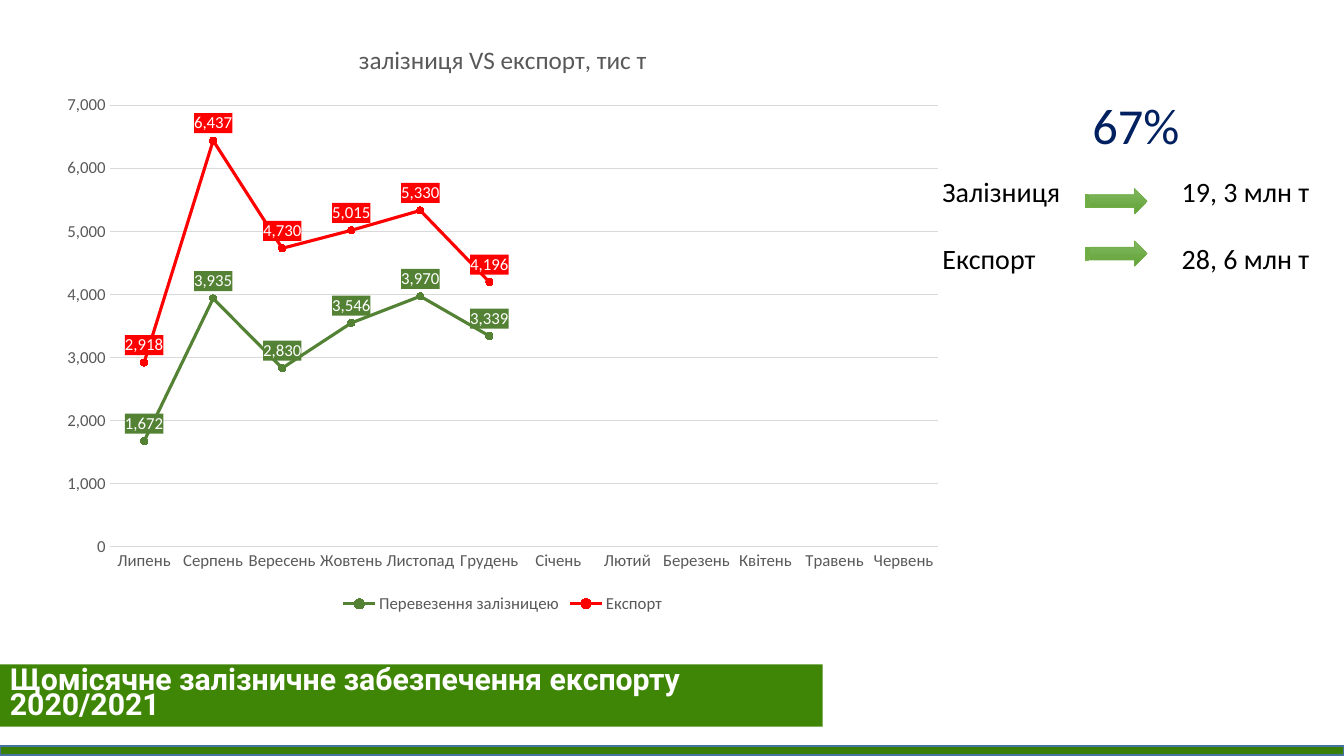
from dataclasses import dataclass

from lxml.etree import SubElement
from pptx import Presentation
from pptx.chart.data import CategoryChartData
from pptx.dml.color import RGBColor
from pptx.enum.chart import (XL_CHART_TYPE, XL_LABEL_POSITION, XL_LEGEND_POSITION,
                             XL_MARKER_STYLE, XL_TICK_MARK)
from pptx.enum.shapes import MSO_SHAPE
from pptx.enum.text import MSO_ANCHOR, PP_ALIGN
from pptx.oxml import parse_xml
from pptx.oxml.ns import nsdecls, qn
from pptx.util import Cm, Pt


@dataclass(frozen=True)
class Theme:
    body_font: str = "Calibri"
    head_font: str = "Roboto"
    rail: str = "548235"
    export: str = "FF0000"
    banner: str = "408606"
    footer: str = "397E06"
    footer_edge: str = "43739E"
    arrow_top: str = "81B861"
    arrow_bottom: str = "62A336"
    arrow_edge: str = "70AD47"
    share: str = "002060"
    axis_text: str = "595959"
    grid: str = "D9D9D9"
    black: str = "000000"
    white: str = "FFFFFF"
    chart_size: float = 12
    chart_title_size: float = 18
    row_size: float = 20
    share_size: float = 36
    banner_size: float = 21.6


@dataclass(frozen=True)
class Box:
    """A region in centimetres."""
    x: float
    y: float
    w: float
    h: float

    def inner(self, dx, dy, w, h):
        return Box(self.x + dx, self.y + dy, w, h)

    def emu(self):
        return Cm(self.x), Cm(self.y), Cm(self.w), Cm(self.h)


THEME = Theme()
MONTHS = ["Липень", "Серпень", "Вересень", "Жовтень", "Листопад", "Грудень",
          "Січень", "Лютий", "Березень", "Квітень", "Травень", "Червень"]
SERIES = [
    ("Перевезення залізницею", [1672, 3935, 2830, 3546, 3970, 3339], THEME.rail),
    ("Експорт", [2918, 6437, 4730, 5015, 5330, 4196], THEME.export),
]
TOTALS = [("Залізниця", "19, 3 млн т"), ("Експорт", "28, 6 млн т")]


def rgb(color):
    return RGBColor.from_string(color)


def set_font(font, size, color, name=THEME.body_font, bold=False):
    font.size, font.name, font.bold = Pt(size), name, bold
    font.color.rgb = rgb(color)


def set_line(line, color, width):
    line.color.rgb = rgb(color)
    line.width = Pt(width)


def add_bar(s, box, color):
    bar = s.shapes.add_shape(MSO_SHAPE.RECTANGLE, *box.emu())
    bar.shadow.inherit = False
    bar.fill.solid()
    bar.fill.fore_color.rgb = rgb(color)
    bar.line.fill.background()
    return bar


def add_text(s, box):
    tf = s.shapes.add_textbox(*box.emu()).text_frame
    tf.word_wrap = True
    return tf


def style_series(series, color):
    series.smooth = False
    set_line(series.format.line, color, 2.25)
    marker = series.marker
    marker.style, marker.size = XL_MARKER_STYLE.CIRCLE, 5
    marker.format.fill.solid()
    marker.format.fill.fore_color.rgb = rgb(color)
    set_line(marker.format.line, color, 0.75)

    labels = series.data_labels
    labels.show_value = True
    labels.position = XL_LABEL_POSITION.ABOVE
    labels.number_format, labels.number_format_is_linked = "#,##0", False
    set_font(labels.font, THEME.chart_size, THEME.white)
    label_fill = parse_xml(
        f'<c:spPr {nsdecls("c", "a")}><a:solidFill><a:srgbClr val="{color}"/>'
        '</a:solidFill></c:spPr>')
    series._element.find(qn("c:dLbls")).find(qn("c:txPr")).addprevious(label_fill)


def add_monthly_chart(s, box):
    data = CategoryChartData(number_format="#,##0")
    data.categories = MONTHS
    for name, values, _ in SERIES:
        data.add_series(name, values + [None] * (len(MONTHS) - len(values)))
    chart = s.shapes.add_chart(XL_CHART_TYPE.LINE_MARKERS, *box.emu(), data).chart
    set_font(chart.font, THEME.chart_size, THEME.axis_text)

    chart.has_title = True
    p = chart.chart_title.text_frame.paragraphs[0]
    p.text = "залізниця VS експорт, тис т"
    set_font(p.font, THEME.chart_title_size, THEME.axis_text)
    chart.has_legend = True
    chart.legend.position = XL_LEGEND_POSITION.BOTTOM
    chart.legend.include_in_layout = False
    set_font(chart.legend.font, THEME.chart_size, THEME.axis_text)

    months, tonnes = chart.category_axis, chart.value_axis
    for axis in (months, tonnes):
        axis.major_tick_mark = axis.minor_tick_mark = XL_TICK_MARK.NONE
        set_font(axis.tick_labels.font, THEME.chart_size, THEME.axis_text)
    set_line(months.format.line, THEME.grid, 0.75)
    tonnes.minimum_scale, tonnes.maximum_scale, tonnes.major_unit = 0, 7000, 1000
    tonnes.format.line.fill.background()
    tonnes.has_major_gridlines = True
    set_line(tonnes.major_gridlines.format.line, THEME.grid, 0.75)
    tonnes.tick_labels.number_format = "#,##0"
    tonnes.tick_labels.number_format_is_linked = False

    for series, (_, _, color) in zip(chart.plots[0].series, SERIES):
        style_series(series, color)


def add_arrow(s, box):
    arrow = s.shapes.add_shape(MSO_SHAPE.STRIPED_RIGHT_ARROW, *box.emu())
    arrow.shadow.inherit = False
    arrow.fill.gradient()
    arrow.fill.gradient_angle = 270
    for stop, color in zip(arrow.fill.gradient_stops,
                           (THEME.arrow_top, THEME.arrow_bottom)):
        stop.color.rgb = rgb(color)
    set_line(arrow.line, THEME.arrow_edge, 0.5)


def add_totals(s, box):
    """Place the share above one row per total, each with its arrow."""
    tf = add_text(s, box.inner(0, 2.03, box.w, 2.82))
    for i, (label, amount) in enumerate(TOTALS):
        p = tf.paragraphs[0] if i == 0 else tf.add_paragraph()
        tabs = SubElement(p._p.get_or_add_pPr(), qn("a:tabLst"))
        SubElement(tabs, qn("a:tab"), pos=str(Cm(6.03)), algn="l")
        p.add_run().text = f"{label}\t{amount}"
        if i:
            p.space_before = Pt(24)
        set_font(p.font, THEME.row_size, THEME.black)
        add_arrow(s, box.inner(3.86, 2.51 + 1.32 * i, 1.55, 0.64))

    p = add_text(s, box.inner(3.78, 0, 3.28, 1.8)).paragraphs[0]
    p.text = "67%"
    set_font(p.font, THEME.share_size, THEME.share)


def add_banner(s, box):
    tf = add_bar(s, box, THEME.banner).text_frame
    tf.word_wrap = True
    tf.vertical_anchor = MSO_ANCHOR.MIDDLE
    p = tf.paragraphs[0]
    p.text = "Щомісячне залізничне забезпечення експорту 2020/2021"
    p.alignment = PP_ALIGN.LEFT
    p.line_spacing = 0.7
    set_font(p.font, THEME.banner_size, THEME.white, THEME.head_font, bold=True)


def main():
    prs = Presentation()
    prs.slide_width, prs.slide_height = Cm(33.87), Cm(19.05)
    s = prs.slides.add_slide(prs.slide_layouts[6])
    footer = add_bar(s, Box(0, 18.8, 33.87, 0.23), THEME.footer)
    set_line(footer.line, THEME.footer_edge, 1)
    add_monthly_chart(s, Box(1.24, 0.51, 22.86, 15.06))
    add_totals(s, Box(23.5, 2.24, 10.36, 4.85))
    add_banner(s, Box(0, 16.74, 20.73, 1.57))
    prs.save("out.pptx")


if __name__ == "__main__":
    main()
